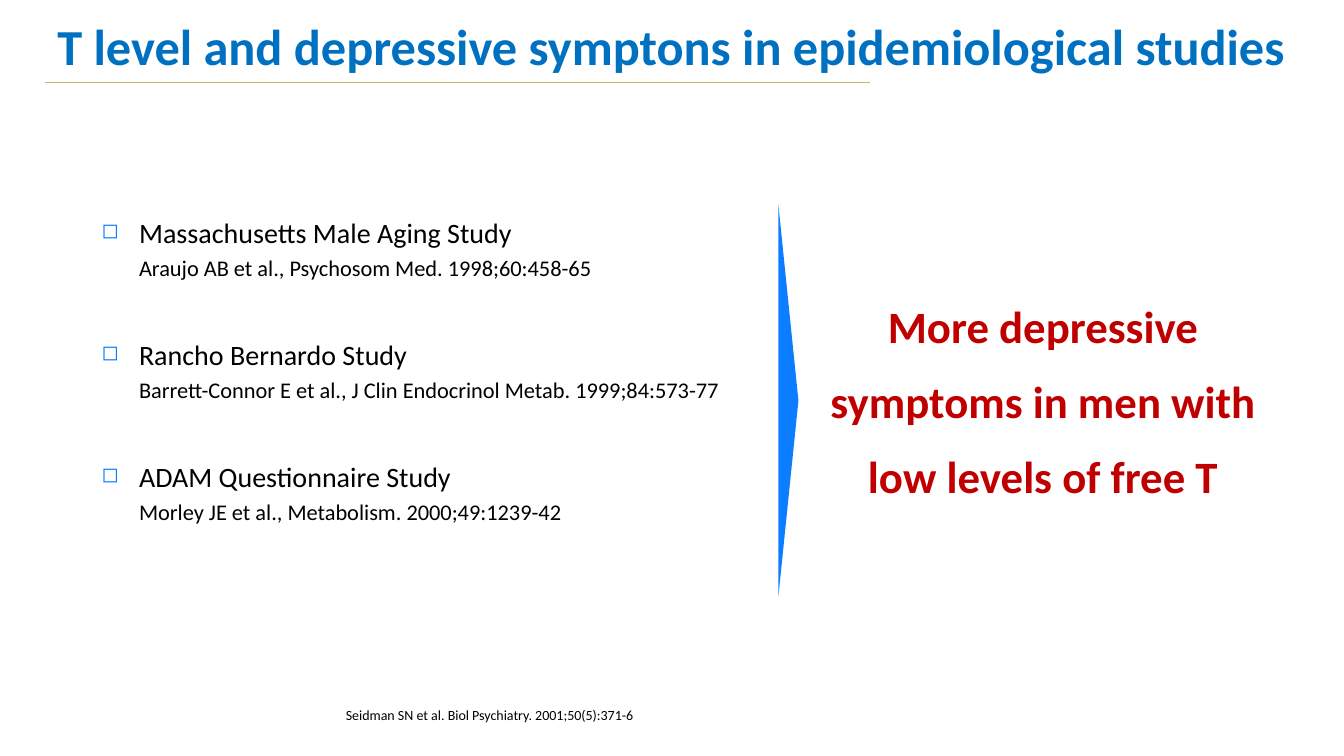
from dataclasses import dataclass

from lxml.etree import SubElement
from pptx import Presentation
from pptx.dml.color import RGBColor
from pptx.enum.shapes import MSO_CONNECTOR, MSO_SHAPE
from pptx.enum.text import PP_ALIGN
from pptx.oxml.ns import qn
from pptx.slide import Slide
from pptx.text.text import Font, TextFrame
from pptx.util import Inches, Length, Pt

BLUE = RGBColor(0x00, 0x70, 0xC0)
BRIGHT = RGBColor(0x0C, 0x7D, 0xFF)
RED = RGBColor(0xC0, 0x00, 0x00)
SAND = RGBColor(0xD6, 0xAC, 0x6F)
BLACK = RGBColor(0x00, 0x00, 0x00)
FACE = "Calibri"
WIDTH, HEIGHT = Inches(13.33), Inches(7.5)
INDENT = Inches(0.37)


@dataclass(frozen=True)
class Area:
    """A place on the slide, in percent of its width and height."""
    left: float
    top: float
    width: float
    height: float

    def box(self) -> tuple[Length, Length, Length, Length]:
        return (share(self.left, WIDTH), share(self.top, HEIGHT),
                share(self.width, WIDTH), share(self.height, HEIGHT))


@dataclass(frozen=True)
class Label:
    text: str
    area: Area
    size: int
    color: RGBColor
    bold: bool = False
    align: PP_ALIGN = PP_ALIGN.LEFT
    lines: float = 1.0
    wrap: bool = True
    inset: tuple[float, float] = (0.1, 0.05)


@dataclass(frozen=True)
class Study:
    name: str
    source: str


LABELS = [
    Label("T level and depressive symptons in epidemiological studies",
          Area(3.53, 1.33, 95.05, 9.47), 36, BLUE, bold=True),
    Label("More depressive symptoms in men with low levels of free T",
          Area(59.64, 35.73, 35.93, 30.93), 32, RED, bold=True,
          align=PP_ALIGN.CENTER, lines=1.4, inset=(0.13, 0.07)),
    Label("Seidman SN et al. Biol Psychiatry. 2001;50(5):371-6",
          Area(24.31, 92.53, 23.78, 4), 10, BLACK,
          align=PP_ALIGN.RIGHT, wrap=False, inset=(0.13, 0.07)),
]
STUDIES = [
    Study("Massachusetts Male Aging Study",
          "Araujo AB et al., Psychosom Med. 1998;60:458-65"),
    Study("Rancho Bernardo Study",
          "Barrett-Connor E et al., J Clin Endocrinol Metab. 1999;84:573-77"),
    Study("ADAM Questionnaire Study",
          "Morley JE et al., Metabolism. 2000;49:1239-42"),
]
LIST = Area(6.83, 26.93, 49.29, 54.8)
ARROW = Area(57.91, 26.93, 1.5, 52.13)
RULE = Area(3.38, 10.93, 61.36, 0)


def share(part: float, whole: Length) -> Length:
    return Length(round(whole * part / 100))


def style(font: Font, size: int, color: RGBColor, bold: bool = False) -> None:
    font.name, font.size, font.bold = FACE, Pt(size), bold
    font.color.rgb = color


def add_frame(slide: Slide, area: Area) -> TextFrame:
    frame = slide.shapes.add_textbox(*area.box()).text_frame
    frame.word_wrap = True
    return frame


def add_label(slide: Slide, label: Label) -> None:
    frame = add_frame(slide, label.area)
    frame.word_wrap = label.wrap
    side, edge = map(Inches, label.inset)
    frame.margin_left = frame.margin_right = side
    frame.margin_top = frame.margin_bottom = edge
    frame.text = label.text
    para = frame.paragraphs[0]
    para.alignment, para.line_spacing = label.align, label.lines
    style(para.runs[0].font, label.size, label.color, label.bold)


def add_list(slide: Slide, studies: list[Study]) -> None:
    frame = add_frame(slide, LIST)
    for index, study in enumerate(studies):
        para = frame.add_paragraph() if index else frame.paragraphs[0]
        para.text = f"{study.name}\v{study.source}"
        para.line_spacing = 1.2
        para.space_before = Pt(35.4 if index else 0)
        # Hollow square bullet with a hanging indent
        props = para._p.get_or_add_pPr()
        props.set("marL", str(INDENT))
        props.set("indent", str(-INDENT))
        tint = SubElement(props, qn("a:buClr"))
        SubElement(tint, qn("a:srgbClr"), val=str(BRIGHT))
        SubElement(props, qn("a:buSzPct"), val="75000")
        SubElement(props, qn("a:buChar"), char="◻")
        for run, size in zip(para.runs, (20, 16)):
            style(run.font, size, BLACK)


def add_rule(slide: Slide) -> None:
    left, top, width, _ = RULE.box()
    rule = slide.shapes.add_connector(
        MSO_CONNECTOR.STRAIGHT, left, top, left + width, top)
    rule.line.color.rgb, rule.line.width = SAND, Pt(1)
    SubElement(rule._element.spPr, qn("a:effectLst"))


def add_arrow(slide: Slide) -> None:
    arrow = slide.shapes.add_shape(MSO_SHAPE.PENTAGON, *ARROW.box())
    arrow.adjustments[0] = 1
    arrow.shadow.inherit = False
    arrow.fill.solid()
    arrow.fill.fore_color.rgb = BRIGHT
    arrow.line.fill.background()


def main() -> None:
    deck = Presentation()
    deck.slide_width, deck.slide_height = WIDTH, HEIGHT
    slide = deck.slides.add_slide(deck.slide_layouts[6])
    # Line below the title
    add_rule(slide)
    # Title, conclusion and citation
    for label in LABELS:
        add_label(slide, label)
    # Studies, leading to the conclusion
    add_list(slide, STUDIES)
    add_arrow(slide)
    deck.save("out.pptx")


if __name__ == "__main__":
    main()
